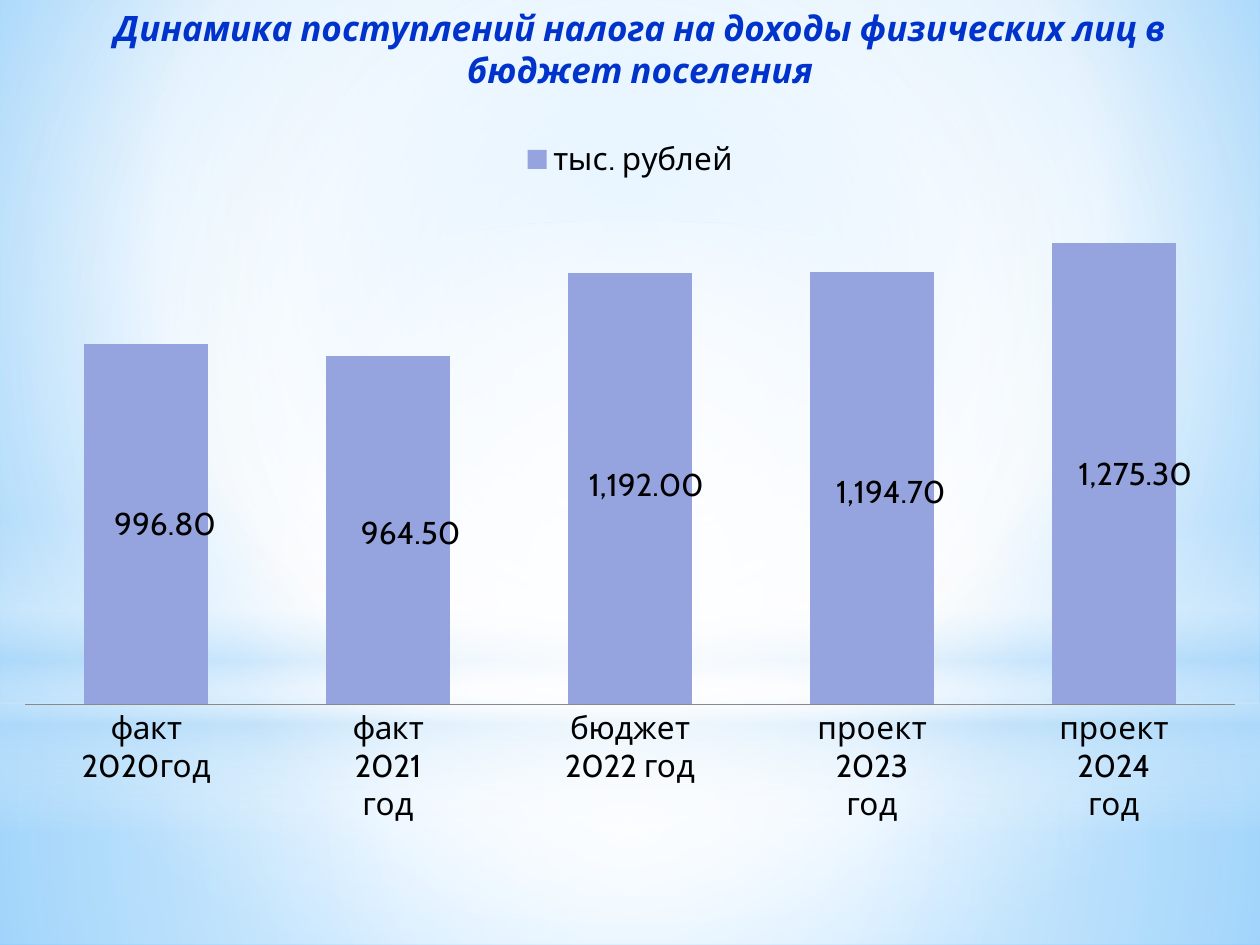
from lxml import etree
from pptx import Presentation
from pptx import util as u
from pptx.chart.data import CategoryChartData
from pptx.dml.color import RGBColor
from pptx.enum import chart as charts, shapes, text
from pptx.oxml.ns import qn

WIDTH, HEIGHT = 10, 7.5
FONT = "Cabin"
BLUE = RGBColor(0x00, 0x33, 0xCC)
BLACK = RGBColor(0, 0, 0)
BAR = RGBColor(0x95, 0xA4, 0xDE)
GREY = RGBColor(0x89, 0x89, 0x89)
WHITE = RGBColor(0xFF, 0xFF, 0xFF)
MIST = RGBColor(0xB4, 0xDC, 0xFA)
SKY = RGBColor(0x9E, 0xD5, 0xFF)
AZURE = RGBColor(0x5B, 0xB9, 0xFF)

# Content
TITLE = "Динамика поступлений налога на доходы физических лиц в бюджет поселения"
SERIES = "тыс. рублей"
NUMBER_FORMAT = "#,##0.00"
ROWS = [  # category, value, label shift as shares of the chart
    ("факт\n2020год", 996.8, (0.015, 0)),
    ("факт\n2021\nгод", 964.5, (0.018, 0.005)),
    ("бюджет\n2022 год", 1192, (0.013, -0.005)),
    ("проект\n2023\nгод", 1194.7, (0.015, 0.005)),
    ("проект\n2024\nгод", 1275.3, (0.017, 0)),
]

# Backdrop: stops are (position, colour, opacity), all in percent
CENTRE = (50, 50, 50, 50)
BACKGROUND = [(0, SKY, 100), (60, WHITE, 100), (100, AZURE, 100)]
RECT, OVAL = shapes.MSO_SHAPE.RECTANGLE, shapes.MSO_SHAPE.OVAL
LAYERS = [  # shape, top, height, stops, focus (None for a vertical sweep)
    (RECT, 5.58, 1.92, [(0, WHITE, 91), (37, WHITE, 76), (100, MIST, 79)], CENTRE),
    (RECT, 0, 5.58, [(0, WHITE, 89), (48, WHITE, 62), (100, MIST, 79)], CENTRE),
    (RECT, 4.12, 2.5, [(0, WHITE, 0), (29, WHITE, 30), (45, MIST, 40),
                       (55, WHITE, 26), (65, MIST, 60), (100, WHITE, 0)], None),
    (OVAL, 1.75, 5.58, [(0, WHITE, 100), (56, WHITE, 0)], CENTRE),
]


def add(parent, tag, **attributes):
    values = {name: str(value) for name, value in attributes.items()}
    return etree.SubElement(parent, qn(tag), values)


def set_gradient(fill, holder, stops, focus):
    """Replace the solid fill inside holder by a gradient."""
    fill.solid()
    solid = holder.find(".//" + qn("a:solidFill"))
    gradient = etree.Element(qn("a:gradFill"), rotWithShape="1")
    stop_list = add(gradient, "a:gsLst")
    for position, color, opacity in stops:
        stop = add(stop_list, "a:gs", pos=position * 1000)
        shade = add(stop, "a:srgbClr", val=color)
        add(shade, "a:alpha", val=opacity * 1000)
    if focus:
        sides = {side: share * 1000 for side, share in zip("ltrb", focus)}
        add(add(gradient, "a:path", path="circle"), "a:fillToRect", **sides)
    else:
        add(gradient, "a:lin", ang=90 * 60000, scaled=0)
    solid.getparent().replace(solid, gradient)


def set_layout(layout, **shares):
    manual = add(layout, "c:manualLayout")
    for name, value in shares.items():
        add(manual, "c:" + name, val=value)


def add_text(page, content, left, top, width, height, size, color, **style):
    box = page.shapes.add_textbox(*map(u.Inches, (left, top, width, height)))
    box.text_frame.word_wrap = True
    para = box.text_frame.paragraphs[0]
    para.alignment = text.PP_ALIGN.CENTER
    span = para.add_run()
    span.text = content
    span.font.name, span.font.size = FONT, u.Pt(size)
    span.font.color.rgb = color
    for name, value in style.items():
        setattr(span.font, name, value)


def set_font(font):
    font.name, font.size = FONT, u.Pt(18)
    font.color.rgb = BLACK


def add_column_chart(page):
    data = CategoryChartData(number_format=NUMBER_FORMAT)
    data.categories = [category for category, _, _ in ROWS]
    data.add_series(SERIES, [value for _, value, _ in ROWS])
    chart = page.shapes.add_chart(
        charts.XL_CHART_TYPE.COLUMN_STACKED, 0, u.Inches(0.99),
        u.Inches(WIDTH), u.Inches(5.66), data).chart
    set_font(chart.font)
    chart.has_title = False
    chart.has_legend = True
    chart.legend.position = charts.XL_LEGEND_POSITION.TOP
    chart.legend.include_in_layout = False

    # Axes
    chart.value_axis.visible = False
    chart.value_axis.has_major_gridlines = False
    chart.value_axis.minimum_scale, chart.value_axis.maximum_scale = 0, 1400
    chart.category_axis.major_tick_mark = charts.XL_TICK_MARK.NONE
    chart.category_axis.format.line.color.rgb = GREY

    # Columns and their labels
    plot = chart.plots[0]
    plot.gap_width, plot.overlap, plot.vary_by_categories = 95, 100, False
    series = plot.series[0]
    series.format.fill.solid()
    series.format.fill.fore_color.rgb = BAR
    series.data_labels.show_value = True
    series.data_labels.number_format = NUMBER_FORMAT
    series.data_labels.number_format_is_linked = False
    for index in range(len(ROWS)):
        label = series.points[index].data_label
        label.position = charts.XL_LABEL_POSITION.CENTER
        set_font(label.font)
    labels = chart.element.iter(qn("c:dLbl"))
    for label, (_, _, (x, y)) in zip(list(labels), ROWS):
        layout = etree.Element(qn("c:layout"))
        set_layout(layout, x=x, y=y)
        label.find(qn("c:idx")).addnext(layout)

    # Plot area
    area = chart.element.find(".//" + qn("c:plotArea"))
    layout = area.find(qn("c:layout"))
    if layout is None:
        layout = etree.Element(qn("c:layout"))
        area.insert(0, layout)
    set_layout(layout, layoutTarget="inner", xMode="edge", yMode="edge",
               x=0.02, y=0.103, w=0.96, h=0.71)


def main():
    deck = Presentation()
    deck.slide_width, deck.slide_height = u.Inches(WIDTH), u.Inches(HEIGHT)
    page = deck.slides.add_slide(deck.slide_layouts[6])

    # Backdrop
    set_gradient(page.background.fill, page.element, BACKGROUND, (20, 10, 20, 60))
    for kind, top, height, stops, focus in LAYERS:
        layer = page.shapes.add_shape(
            kind, 0, u.Inches(top), u.Inches(WIDTH), u.Inches(height))
        layer.shadow.inherit = False
        layer.line.fill.background()
        set_gradient(layer.fill, layer.element.spPr, stops, focus)

    # Title and chart
    add_text(page, TITLE, 0.33, 0, 9.5, 1.15, 20, BLUE, bold=True, italic=True)
    add_column_chart(page)
    deck.save("out.pptx")


if __name__ == "__main__":
    main()
